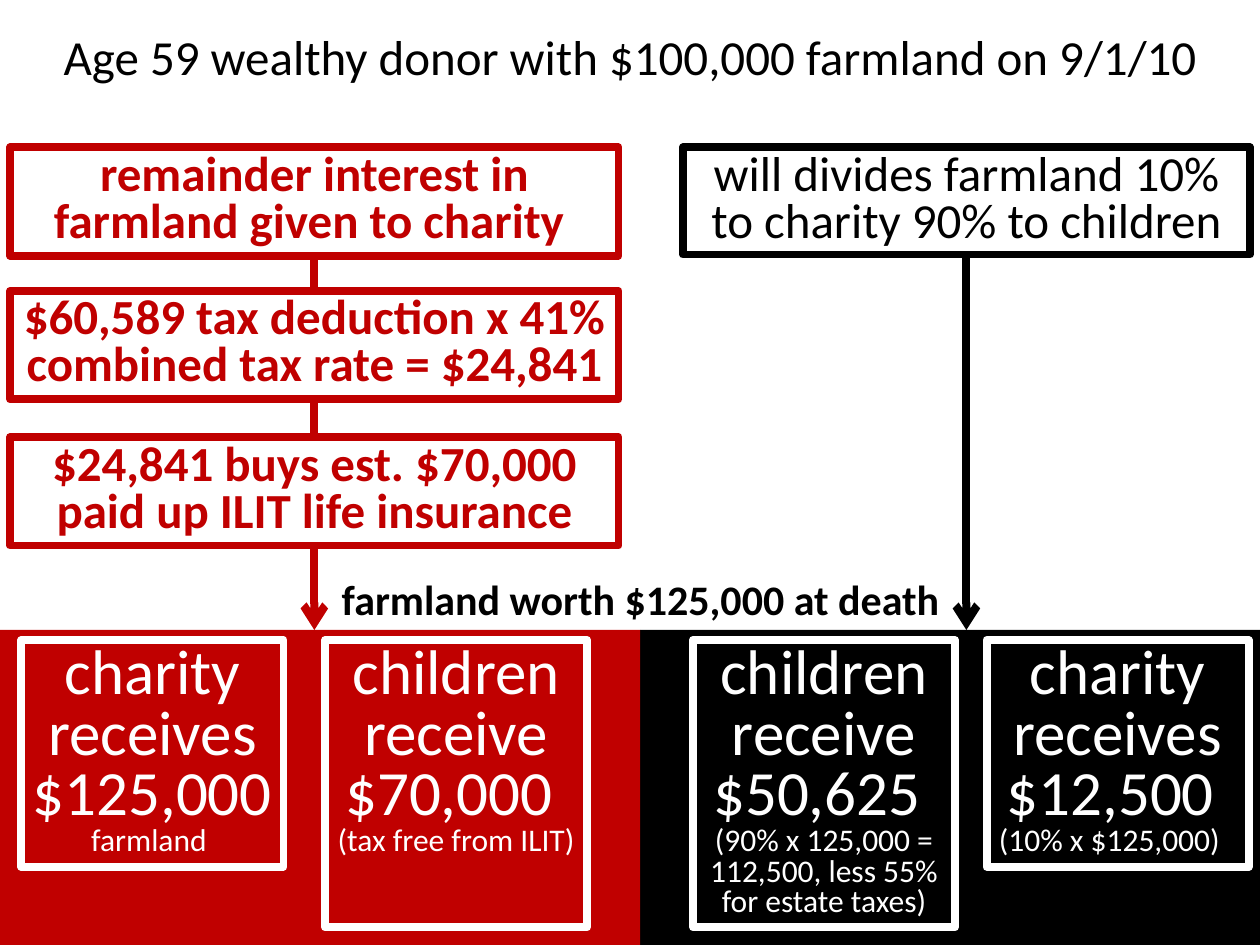
from dataclasses import dataclass

from pptx import Presentation
from pptx.dml.color import RGBColor
from pptx.enum.shapes import MSO_CONNECTOR, MSO_SHAPE
from pptx.enum.text import MSO_ANCHOR, MSO_AUTO_SIZE, PP_ALIGN
from pptx.oxml.ns import qn
from pptx.util import Inches, Pt
from lxml.etree import SubElement

RED, BLACK, WHITE = "C00000", "000000", "FFFFFF"
LINE_WIDTH = Pt(4.5)
PANEL_TOP = 5
OUTCOME_TOP, OUTCOME_WIDTH = 5.08, 2.08


@dataclass
class Step:
    text: str
    left: float
    top: float
    width: float
    height: float
    color: str
    bold: bool = False


@dataclass
class Outcome:
    amount: str
    note: str
    left: float
    height: float
    note_align: PP_ALIGN = PP_ALIGN.CENTER
    same_paragraph: bool = False
    side_inset: float = 0.1


RED_STEPS = [
    Step(text, 0.08, top, 4.83, 0.86, RED, True)
    for text, top in [
        ("remainder interest in farmland given to charity ", 1.17),
        ("$60,589 tax deduction x 41% combined tax rate = $24,841", 2.31),
        ("$24,841 buys est. $70,000 paid up ILIT life insurance", 3.47),
    ]
]
WILL_STEP = Step("will divides farmland 10% to charity 90% to children",
                 5.42, 1.17, 4.5, 0.85, BLACK)
OUTCOMES = [
    Outcome("charity receives $125,000 ", "farmland ", 0.17, 1.8,
            same_paragraph=True, side_inset=0),
    Outcome("children receive $70,000 ", "(tax free from ILIT)", 2.58, 2.28),
    Outcome("children receive $50,625 ",
            "(90% x 125,000 = 112,500, less 55% for estate taxes)", 5.5, 2.28),
    Outcome("charity receives $12,500 ", "(10% x $125,000)", 7.83, 1.8,
            note_align=PP_ALIGN.LEFT),
]


def rgb(color: str) -> RGBColor:
    return RGBColor.from_string(color)


def add_rect(s, left: float, top: float, width: float, height: float,
             fill: str | None = None, line: str | None = None):
    sp = s.shapes.add_shape(MSO_SHAPE.RECTANGLE, Inches(left), Inches(top),
                            Inches(width), Inches(height))
    sp.shadow.inherit = False
    if fill:
        sp.fill.solid()
        sp.fill.fore_color.rgb = rgb(fill)
    else:
        sp.fill.background()
    if line:
        sp.line.color.rgb = rgb(line)
        sp.line.width = LINE_WIDTH
    else:
        sp.line.fill.background()
    return sp


def prepare_frame(sp, side_inset: float = 0.1):
    """Set wrapping, anchor and insets, and return the text frame."""
    tf = sp.text_frame
    tf.word_wrap = True
    tf.auto_size = MSO_AUTO_SIZE.SHAPE_TO_FIT_TEXT
    tf.vertical_anchor = MSO_ANCHOR.TOP
    tf.margin_left = tf.margin_right = Inches(side_inset)
    return tf


def write(p, text: str, *, size: float, color: str, bold: bool = False,
          align: PP_ALIGN = PP_ALIGN.CENTER, spacing: float | None = 0.8) -> None:
    p.alignment = align
    p.line_spacing = spacing
    r = p.add_run()
    r.text = text
    r.font.name = "Calibri"
    r.font.size = Pt(size)
    r.font.bold = bold
    r.font.color.rgb = rgb(color)


def add_step(s, step: Step):
    sp = add_rect(s, step.left, step.top, step.width, step.height, line=step.color)
    write(prepare_frame(sp).paragraphs[0], step.text,
          size=28, color=step.color, bold=step.bold)
    return sp


def add_outcome(s, outcome: Outcome) -> None:
    sp = add_rect(s, outcome.left, OUTCOME_TOP, OUTCOME_WIDTH, outcome.height, line=WHITE)
    tf = prepare_frame(sp, outcome.side_inset)
    p = tf.paragraphs[0]
    write(p, outcome.amount, size=36, color=WHITE)
    if not outcome.same_paragraph:
        p = tf.add_paragraph()
    write(p, outcome.note, size=18, color=WHITE, align=outcome.note_align)


def add_label(s, text: str, left: float, top: float, width: float, height: float,
              **text_format) -> None:
    sp = s.shapes.add_textbox(Inches(left), Inches(top), Inches(width), Inches(height))
    write(prepare_frame(sp).paragraphs[0], text, color=BLACK, **text_format)


def add_link(s, box, color: str, next_box=None) -> None:
    """Join a box to the next one, or point an arrow down to the outcome panel."""
    x = box.left + box.width // 2
    link = s.shapes.add_connector(MSO_CONNECTOR.STRAIGHT, x, box.top + box.height,
                                  x, Inches(PANEL_TOP))
    link.begin_connect(box, 2)
    link.line.color.rgb = rgb(color)
    link.line.width = LINE_WIDTH
    if next_box is not None:
        link.end_connect(next_box, 0)
    else:
        SubElement(link.line._get_or_add_ln(), qn("a:tailEnd"), type="arrow")
    SubElement(link._element.spPr, qn("a:effectLst"))


def main() -> None:
    prs = Presentation()
    prs.slide_width, prs.slide_height = Inches(10), Inches(7.5)
    s = prs.slides.add_slide(prs.slide_layouts[6])

    add_rect(s, 5.08, PANEL_TOP, 4.92, 2.5, fill=BLACK)
    add_rect(s, 0, PANEL_TOP, 5.08, 2.5, fill=RED)

    red_boxes = [add_step(s, step) for step in RED_STEPS]
    will_box = add_step(s, WILL_STEP)
    for outcome in OUTCOMES:
        add_outcome(s, outcome)

    add_label(s, "farmland worth $125,000 at death", 2.42, 4.5, 5.33, 0.5,
              size=24, bold=True, spacing=None)
    add_label(s, "Age 59 wealthy donor with $100,000 farmland on 9/1/10",
              0, 0.25, 10, 0.49, size=28)

    add_link(s, will_box, BLACK)
    for box, next_box in zip(red_boxes, red_boxes[1:] + [None]):
        add_link(s, box, RED, next_box)

    prs.save("out.pptx")


if __name__ == "__main__":
    main()
